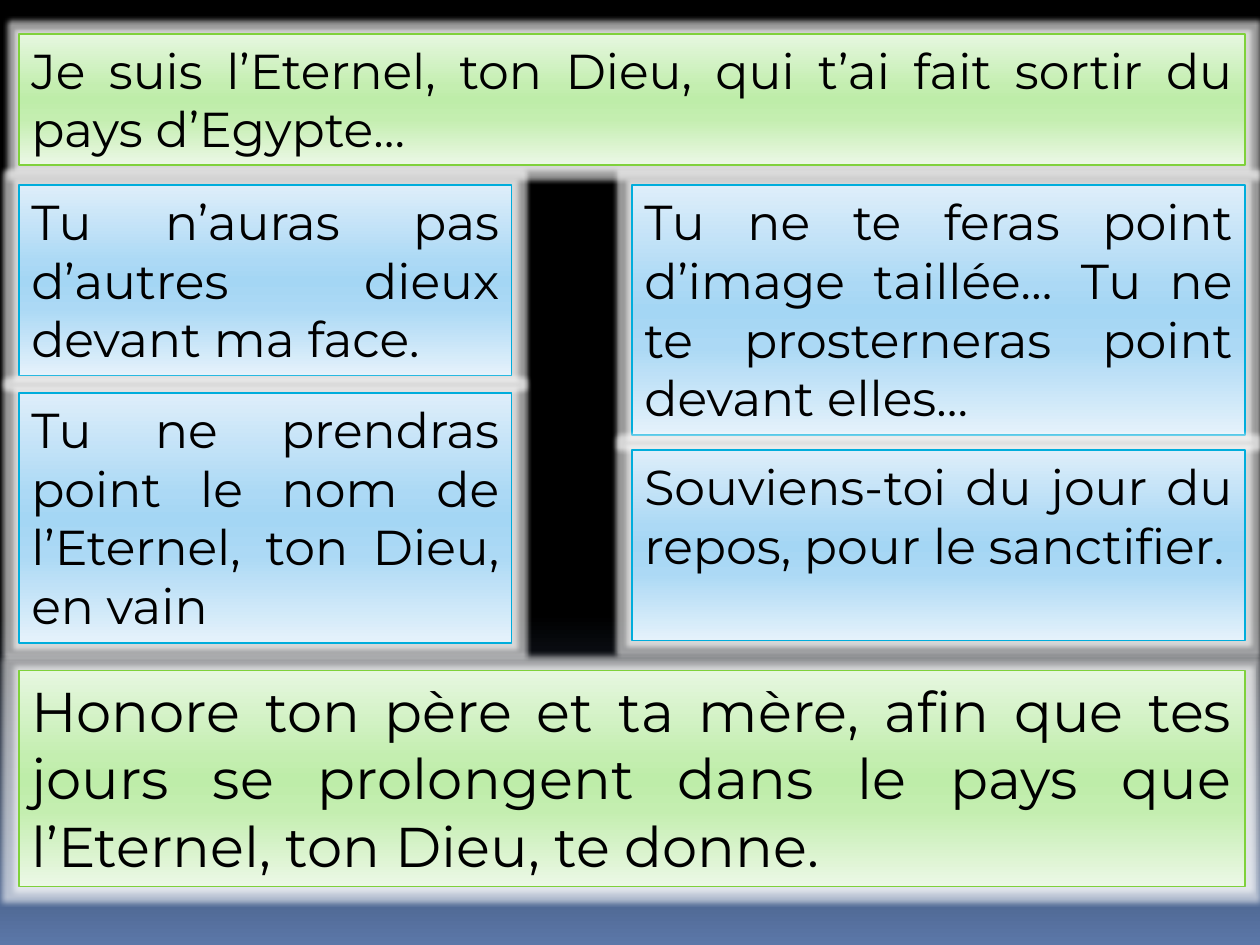
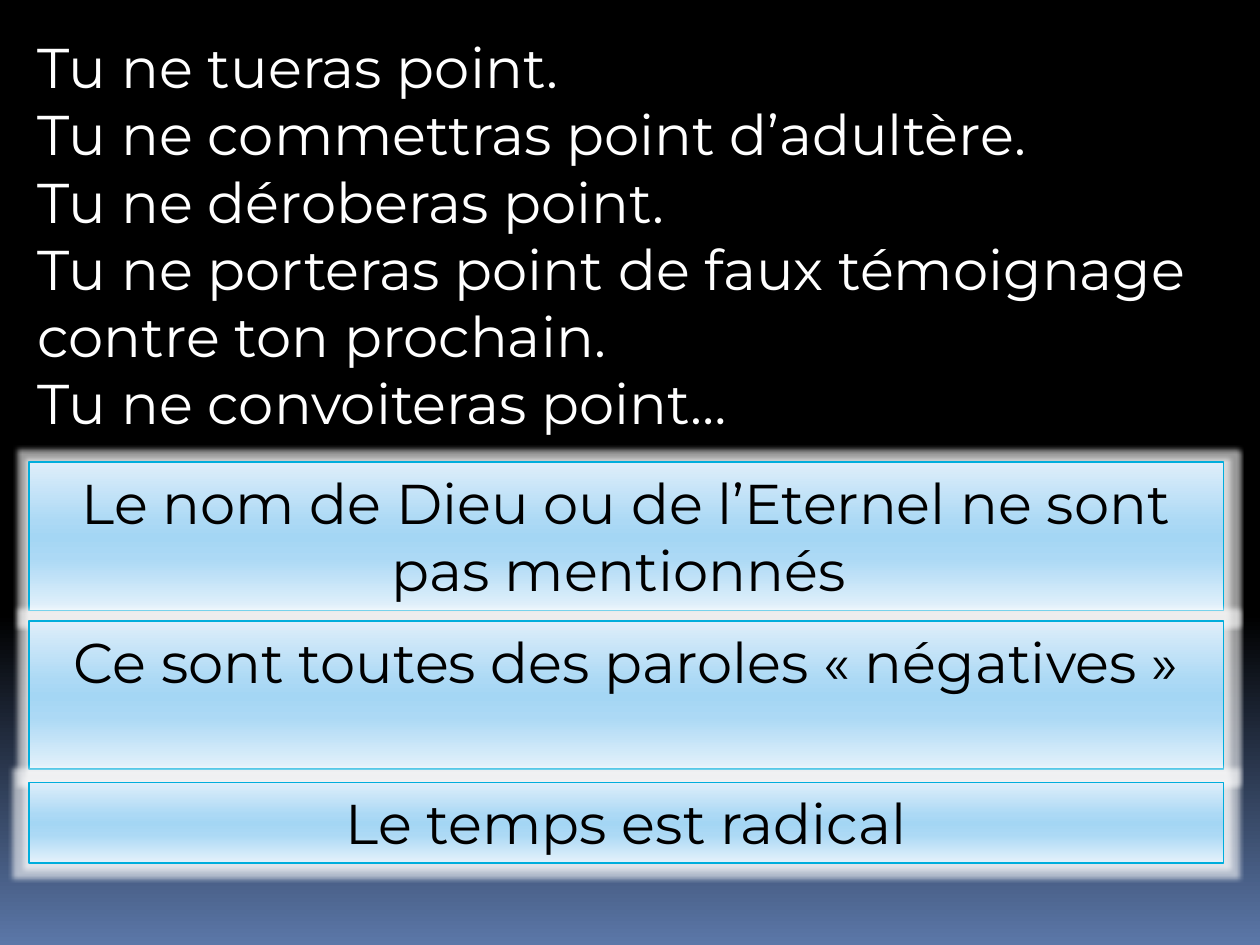
from lxml.etree import SubElement
from pptx import Presentation
from pptx.dml.color import RGBColor
from pptx.enum.shapes import MSO_SHAPE
from pptx.enum.text import MSO_ANCHOR, PP_ALIGN
from pptx.oxml.ns import qn
from pptx.util import Pt

FONT = "Montserrat"
LINE_SPACING = 1.21
INSET = 3.6
BLACK, WHITE = "000000", "FFFFFF"
NIGHT = [(0, BLACK), (65, BLACK), (100, "5B77A8")]
GREEN = ("7FD13B", [(0, "E6F7E0"), (40, "C4EEB0"), (50, "BEEDA9"),
                    (65, "C4EEB0"), (100, "ECF8E6")])
BLUE = ("00ADDC", [(0, "DEEEFA"), (40, "ACD9F5"), (50, "A4D6F4"),
                   (65, "ACD9F5"), (100, "E5F2FB")])


def rgb(value):
    """Turn a hex string into a colour."""
    return RGBColor.from_string(value)


def height(lines, size):
    """Return the height in points of a box holding so many lines of text."""
    return lines * size * LINE_SPACING + 2 * INSET


class Deck:
    """Hold the shared style and the current slide."""

    def __init__(self):
        """Open a 10 by 7.5 inch presentation."""
        self.prs = Presentation()
        self.prs.slide_width, self.prs.slide_height = Pt(720), Pt(540)

    def slide(self):
        """Start a blank slide on the night gradient."""
        self.s = self.prs.slides.add_slide(self.prs.slide_layouts[6])
        self.gradient(self.s.background.fill, self.s.element, NIGHT)

    def gradient(self, fill, element, stops):
        """Fill from top to bottom through the given stops."""
        fill.gradient()
        fill.gradient_angle = 270
        stop_list = next(element.iter(qn("a:gsLst")))
        for old in list(stop_list):
            stop_list.remove(old)
        for percent, value in stops:
            gs = SubElement(stop_list, qn("a:gs"), pos=str(percent * 1000))
            SubElement(gs, qn("a:srgbClr"), val=value)

    def glow(self, sp):
        """Surround a shape with a soft white halo."""
        sp.shadow.inherit = False
        effects = sp.element.spPr.find(qn("a:effectLst"))
        halo = SubElement(effects, qn("a:glow"), rad=str(Pt(5.5)))
        value = SubElement(halo, qn("a:srgbClr"), val=WHITE)
        SubElement(value, qn("a:alpha"), val="60000")

    def set_text(self, sp, paragraphs, size, color, align):
        """Set the paragraphs from the top of a shape."""
        tf = sp.text_frame
        tf.word_wrap = True
        tf.vertical_anchor = MSO_ANCHOR.TOP
        tf.text = "\n".join(paragraphs)
        for p in tf.paragraphs:
            p.alignment = align
            p.font.name, p.font.size = FONT, Pt(size)
            p.font.color.rgb = rgb(color)

    def text(self, x, y, w, lines, paragraphs, size):
        """Add white text straight on the background."""
        sp = self.s.shapes.add_textbox(Pt(x), Pt(y), Pt(w), Pt(height(lines, size)))
        self.set_text(sp, paragraphs, size, WHITE, PP_ALIGN.LEFT)

    def panel(self, x, y, w, lines, text, style, size, align=PP_ALIGN.JUSTIFY):
        """Add a glowing gradient panel sized for its lines."""
        sp = self.s.shapes.add_shape(MSO_SHAPE.RECTANGLE, Pt(x), Pt(y), Pt(w),
                                     Pt(height(lines, size)))
        border, stops = style
        self.gradient(sp.fill, sp.element, stops)
        sp.line.color.rgb = rgb(border)
        sp.line.width = Pt(0.94)
        self.glow(sp)
        self.set_text(sp, [text], size, BLACK, align)


def commandments(deck):
    """Build the slide of the first five commandments."""
    left, right, full, narrow, wide = 10.8, 361.2, 700.6, 281.5, 350.2
    deck.slide()
    for x, y, w, lines, text, style, size in [
        (left, 19.4, full, 2, "Je suis l’Eternel, ton Dieu, qui t’ai fait sortir "
         "du pays d’Egypte…", GREEN, 28),
        (left, 105.8, narrow, 3, "Tu n’auras pas d’autres dieux devant ma face.",
         BLUE, 28),
        (right, 105.8, wide, 4, "Tu ne te feras point d’image taillée… Tu ne te "
         "prosterneras point devant elles…", BLUE, 28),
        (left, 224.6, narrow, 4, "Tu ne prendras point le nom de l’Eternel, ton "
         "Dieu, en vain", BLUE, 28),
        (right, 257.2, wide, 3, "Souviens-toi du jour du repos, pour le "
         "sanctifier.", BLUE, 28),
        (left, 383.2, full, 3, "Honore ton père et ta mère, afin que tes jours se "
         "prolongent dans le pays que l’Eternel, ton Dieu, te donne.", GREEN, 32),
    ]:
        deck.panel(x, y, w, lines, text, style, size)


def prohibitions(deck):
    """Build the slide of the last five commandments and three remarks."""
    width, size = 682.6, 32
    deck.slide()
    deck.text(14.4, 15.1, width, 6, [
        "Tu ne tueras point.",
        "Tu ne commettras point d’adultère.",
        "Tu ne déroberas point.",
        "Tu ne porteras point de faux témoignage contre ton prochain.",
        "Tu ne convoiteras point…",
    ], size)
    for y, lines, text in [
        (264.2, 2, "Le nom de Dieu ou de l’Eternel ne sont pas mentionnés "),
        (355, 2, "Ce sont toutes des paroles « négatives »"),
        (447.1, 1, "Le temps est radical"),
    ]:
        deck.panel(16.6, y, width, lines, text, BLUE, size, PP_ALIGN.CENTER)


def main():
    """Build both slides and save them."""
    deck = Deck()
    commandments(deck)
    prohibitions(deck)
    deck.prs.save("out.pptx")


if __name__ == "__main__":
    main()
